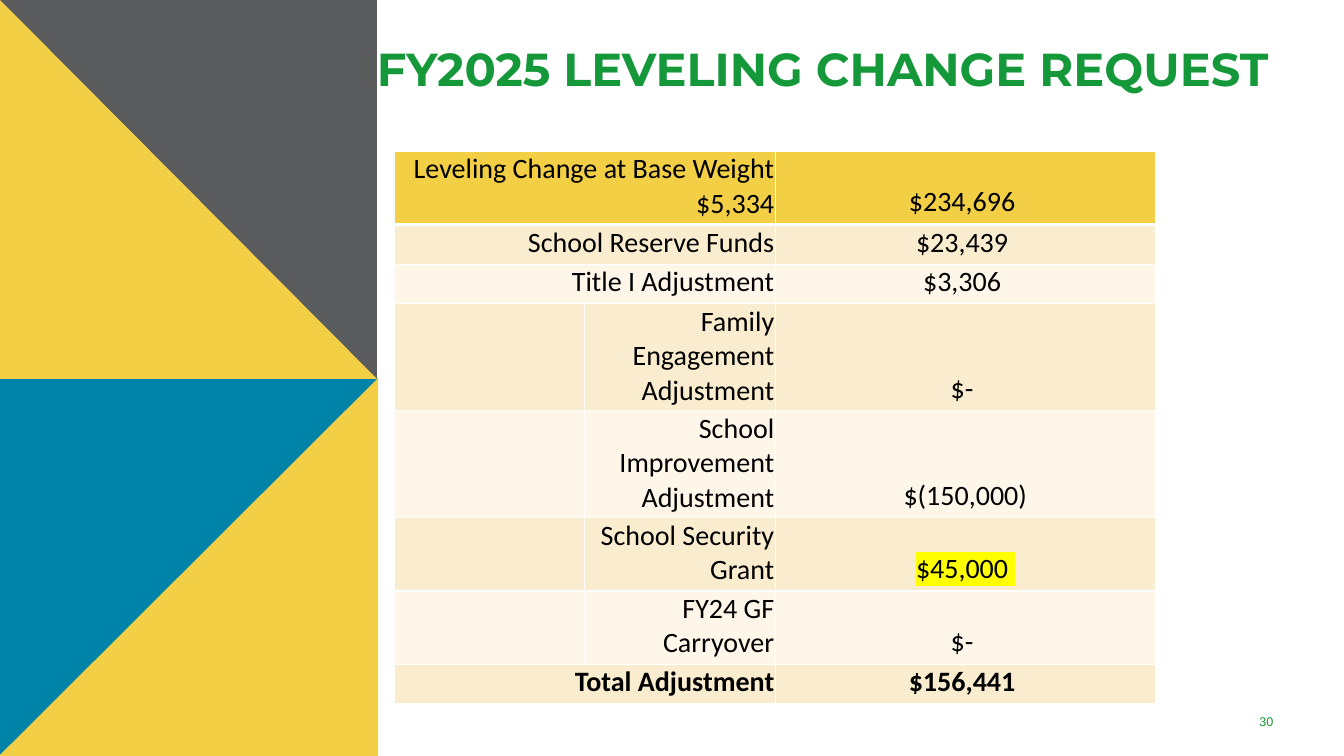
"""Build the FY2025 leveling change request slide."""
from lxml import etree
from pptx import Presentation
from pptx import util as u
from pptx.dml.color import RGBColor
from pptx.enum import text
from pptx.oxml import ns

COLORS = {
    "blue": "0083A9", "yellow": "F3CF45", "gray": "595B5D", "green": "159839",
    "black": "000000", "white": "FFFFFF", "cream": "FAEDCF", "ivory": "FDF6E9",
    "highlight": "FFFF00",
}

PANELS = [
    ("blue", [(0, 3.75), (3.75, 3.75), (3.75, 7.5), (0, 7.5)]),
    ("yellow", [(3.75, 3.75), (3.75, 7.5), (0, 7.5), (0, 7.49)]),
    ("gray", [(0, 0), (3.74, 0), (3.74, 3.76), (0, 3.76)]),
    ("yellow", [(0, 0), (3.74, 3.76), (0, 3.76)]),
]

COLUMN_WIDTHS = [1.89, 1.89, 3.77]

# label, amount, row height, label is indented
ADJUSTMENTS = [
    ("Leveling Change at Base Weight $5,334", "$234,696 ", 0.26, False),
    ("School Reserve Funds", "$23,439 ", 0.26, False),
    ("Title I Adjustment", "$3,306 ", 0.38, False),
    ("Family Engagement Adjustment", "$- ", 0.45, True),
    ("School Improvement Adjustment", "$(150,000)", 0.88, True),
    ("School Security Grant", "$45,000 ", 0.38, True),
    ("FY24 GF Carryover", "$- ", 0.38, True),
    ("Total Adjustment", "$156,441 ", 0.38, False),
]
HIGHLIGHTED = "$45,000 "


def rgb(name):
    """Return the named colour."""
    return RGBColor.from_string(COLORS[name])


def write(frame, words, *, size, font, color="black", bold=False,
          align=text.PP_ALIGN.LEFT, highlight=None):
    """Put formatted words in the first paragraph of a text frame."""
    paragraph = frame.paragraphs[0]
    paragraph.alignment = align
    run = paragraph.add_run()
    run.text = words
    run.font.size = u.Pt(size)
    run.font.bold = bold
    run.font.color.rgb = rgb(color)
    run.font.name = font
    if highlight:
        mark = etree.Element(ns.qn("a:highlight"))
        etree.SubElement(mark, ns.qn("a:srgbClr"), val=COLORS[highlight])
        run.font.fill._xPr.find(ns.qn("a:solidFill")).addnext(mark)


def add_panel(slide, color, corners):
    """Draw one filled polygon of the side artwork."""
    points = [(u.Inches(x), u.Inches(y)) for x, y in corners]
    builder = slide.shapes.build_freeform(*points[0])
    builder.add_line_segments(points[1:])
    panel = builder.convert_to_shape()
    panel.shadow.inherit = False
    panel.fill.solid()
    panel.fill.fore_color.rgb = rgb(color)
    panel.line.fill.background()


def add_label(slide, words, box, anchor, **style):
    """Add a wrapped text box."""
    frame = slide.shapes.add_textbox(*map(u.Inches, box)).text_frame
    frame.word_wrap = True
    frame.vertical_anchor = anchor
    write(frame, words, **style)


def set_borders(cell, **widths):
    """Give a cell white borders, one point wide unless stated."""
    properties = cell._tc.get_or_add_tcPr()
    for position, side in enumerate("LRTB"):
        line = etree.Element(ns.qn(f"a:ln{side}"), w=str(u.Pt(widths.get(side, 1))))
        fill = etree.SubElement(line, ns.qn("a:solidFill"))
        etree.SubElement(fill, ns.qn("a:srgbClr"), val=COLORS["white"])
        properties.insert(position, line)


def style_cell(cell, row):
    """Set the fill, insets, anchor and borders of a table cell."""
    cell.fill.solid()
    cell.fill.fore_color.rgb = rgb("yellow" if row == 0 else ("ivory", "cream")[row % 2])
    cell.margin_left = cell.margin_right = cell.margin_top = u.Inches(0.01)
    cell.margin_bottom = u.Inches(0.05)
    cell.vertical_anchor = text.MSO_ANCHOR.BOTTOM
    set_borders(cell, **({0: {"B": 3}, 1: {"T": 3}}.get(row, {})))


def add_adjustments(slide):
    """Add the table of funding adjustments."""
    heights = [entry[2] for entry in ADJUSTMENTS]
    box = (3.91, 1.5, sum(COLUMN_WIDTHS), sum(heights))
    table = slide.shapes.add_table(
        len(ADJUSTMENTS), len(COLUMN_WIDTHS), *map(u.Inches, box)).table
    for column, width in zip(table.columns, COLUMN_WIDTHS):
        column.width = u.Inches(width)
    for row, (label, amount, height, indented) in enumerate(ADJUSTMENTS):
        table.rows[row].height = u.Inches(height)
        for column in range(len(COLUMN_WIDTHS)):
            style_cell(table.cell(row, column), row)
        if not indented:
            table.cell(row, 0).merge(table.cell(row, 1))
        style = {"size": 20, "font": "Calibri", "bold": row == len(ADJUSTMENTS) - 1}
        write(table.cell(row, int(indented)).text_frame, label,
              align=text.PP_ALIGN.RIGHT, **style)
        write(table.cell(row, 2).text_frame, amount, align=text.PP_ALIGN.CENTER,
              highlight="highlight" if amount == HIGHLIGHTED else None, **style)


def main():
    """Build and save the slide."""
    deck = Presentation()
    deck.slide_width, deck.slide_height = u.Inches(13.33), u.Inches(7.5)
    slide = deck.slides.add_slide(deck.slide_layouts[6])
    for color, corners in PANELS:
        add_panel(slide, color, corners)
    add_label(slide, "FY2025 LEVELING CHANGE REQUEST", (3.64, 0.35, 9.69, 0.84),
              text.MSO_ANCHOR.TOP, size=33, font="Montserrat", color="green", bold=True)
    add_adjustments(slide)
    add_label(slide, "30", (12.02, 7.01, 1.08, 0.3), text.MSO_ANCHOR.MIDDLE,
              size=9, font="Arial", color="green", align=text.PP_ALIGN.CENTER)
    deck.save("out.pptx")


if __name__ == "__main__":
    main()
